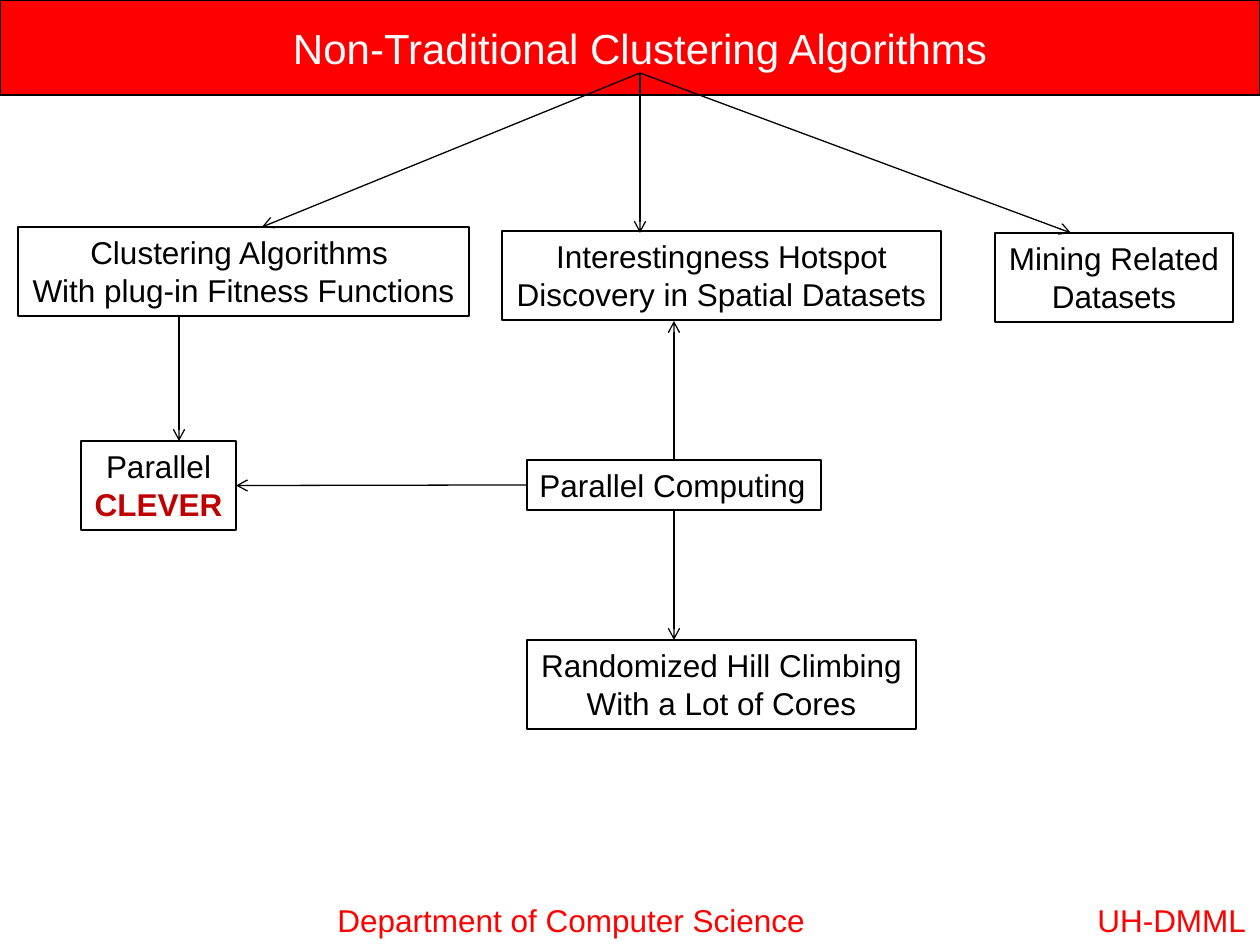
from lxml import etree
from pptx import Presentation
from pptx.dml.color import RGBColor
from pptx.enum.shapes import MSO_CONNECTOR, MSO_SHAPE
from pptx.enum.text import MSO_ANCHOR, MSO_AUTO_SIZE, PP_ALIGN
from pptx.oxml.ns import qn
from pptx.util import Emu, Pt

STRAIGHT = MSO_CONNECTOR.STRAIGHT
RECTANGLE = MSO_SHAPE.RECTANGLE
MIDDLE = MSO_ANCHOR.MIDDLE
TOP = MSO_ANCHOR.TOP
NO_AUTO_SIZE = MSO_AUTO_SIZE.NONE
CENTER = PP_ALIGN.CENTER
LEFT = PP_ALIGN.LEFT

PX_PER_INCH = 126
FONT = "Arial"
LINE_WIDTH = Pt(0.75)
COLORS = {
    "red": "FF0000",
    "dark_red": "C00000",
    "black": "000000",
    "white": "FFFFFF",
}
TITLE_LAYOUT = 5
TOP_SITE, LEFT_SITE, BOTTOM_SITE, RIGHT_SITE = range(4)


def px(length):
    return Emu(round(length * 914400 / PX_PER_INCH))


def color(name):
    return RGBColor.from_string(COLORS[name])


def write_text(shape, text, size, color_name, alignment=LEFT, anchor=TOP, wrap=False):
    text_frame = shape.text_frame
    text_frame.text = text
    text_frame.word_wrap = wrap
    text_frame.auto_size = NO_AUTO_SIZE
    text_frame.vertical_anchor = anchor
    for paragraph in text_frame.paragraphs:
        paragraph.alignment = alignment
        for run in paragraph.runs:
            run.font.name = FONT
            run.font.size = Pt(size)
            run.font.color.rgb = color(color_name)


def add_rectangle(slide, left, top, width, height, fill=None):
    shape = slide.shapes.add_shape(RECTANGLE, px(left), px(top), px(width), px(height))
    shape.shadow.inherit = False
    if fill:
        shape.fill.solid()
        shape.fill.fore_color.rgb = color(fill)
    else:
        shape.fill.background()
    shape.line.color.rgb = color("black")
    shape.line.width = LINE_WIDTH
    return shape


def add_title(slide, text):
    title = slide.shapes.title
    title.left, title.top, title.width, title.height = px(73), px(0), px(1134), px(95)
    write_text(title, text, 24, "white", CENTER, MIDDLE, wrap=True)
    banner = add_rectangle(slide, 0, 0, 1260, 95, "red")
    title.element.addprevious(banner.element)


def add_label(slide, left, width, text):
    label = slide.shapes.add_textbox(px(left), px(895), px(width), px(50))
    write_text(label, text, 18, "red")


def add_node(slide, left, top, width, height, text, alignment=CENTER):
    node = add_rectangle(slide, left, top, width, height)
    write_text(node, text, 18, "black", alignment)
    return node


def add_arrow(slide, start, end):
    arrow = slide.shapes.add_connector(STRAIGHT, *map(px, start + end))
    arrow.line.color.rgb = color("black")
    arrow.line.width = LINE_WIDTH
    etree.SubElement(arrow.line._get_or_add_ln(), qn("a:tailEnd"), type="arrow")
    etree.SubElement(arrow.element.spPr, qn("a:effectLst"))
    return arrow


def main():
    presentation = Presentation()
    presentation.slide_width = px(1260)
    presentation.slide_height = px(945)
    slide = presentation.slides.add_slide(presentation.slide_layouts[TITLE_LAYOUT])

    add_title(slide, "Non-Traditional Clustering Algorithms")
    add_label(slide, 325, 498, "Department of Computer Science")
    add_label(slide, 1085, 175, "UH-DMML")

    add_node(slide, 18, 227, 451, 89, "Clustering Algorithms \nWith plug-in Fitness Functions")
    add_node(slide, 502, 231, 439, 89, "Interestingness Hotspot\nDiscovery in Spatial Datasets")
    add_node(slide, 995, 233, 238, 89, "Mining Related\nDatasets")
    computing = add_node(slide, 527, 460, 294, 50, "Parallel Computing", LEFT)
    clever = add_node(slide, 81, 441, 155, 89, "Parallel\nCLEVER")
    add_node(slide, 527, 640, 389, 89, "Randomized Hill Climbing\nWith a Lot of Cores")

    clever_font = clever.text_frame.paragraphs[1].runs[0].font
    clever_font.bold = True
    clever_font.color.rgb = color("dark_red")

    title_point = (640, 73)
    for topic_point in ((262, 227), (640, 233), (1071, 233)):
        add_arrow(slide, title_point, topic_point)
    add_arrow(slide, (179, 316), (179, 441))

    to_clever = add_arrow(slide, (527, 485), (236, 485))
    to_clever.begin_connect(computing, LEFT_SITE)
    to_clever.end_connect(clever, RIGHT_SITE)
    to_hill_climbing = add_arrow(slide, (674, 510), (674, 640))
    to_hill_climbing.begin_connect(computing, BOTTOM_SITE)
    to_hotspot = add_arrow(slide, (674, 460), (674, 321))
    to_hotspot.begin_connect(computing, TOP_SITE)

    presentation.save("out.pptx")


if __name__ == "__main__":
    main()
